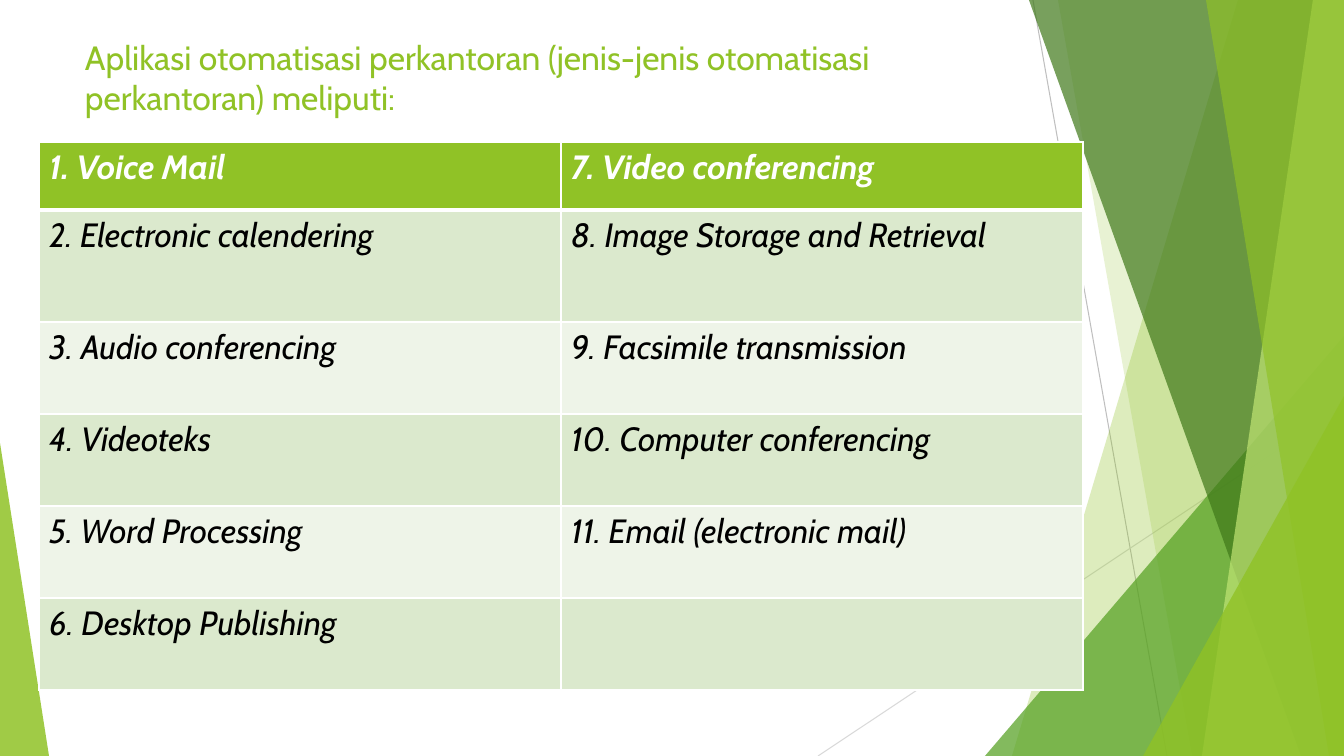
from dataclasses import dataclass

from lxml import etree
from pptx import Presentation
from pptx import util as u
from pptx.dml.color import RGBColor
from pptx.enum import shapes, text
from pptx.oxml.ns import qn

WIDTH, HEIGHT = 1344, 756
EMU_PER_PX = 914400 / 100.8


@dataclass(frozen=True)
class Theme:
    font: str = "Cabin"
    size: int = 24
    hairline: float = 0.75
    border: int = 1
    header_border: int = 3
    white: str = "FFFFFF"
    black: str = "000000"
    lime: str = "90C226"
    pale_lime: str = "C0E474"
    leaf: str = "54A021"
    forest: str = "3F7819"
    bands: tuple = ("DBE9CD", "EEF4E8")
    gray: str = "BFBFBF"
    light_gray: str = "D9D9D9"


def px(length):
    return u.Emu(round(length * EMU_PER_PX))


def rgb(color):
    return RGBColor.from_string(color)


class SlideBuilder:
    def __init__(self, slide, theme):
        self.slide = slide
        self.theme = theme

    def line(self, start, end, color):
        connector = self.slide.shapes.add_connector(
            shapes.MSO_CONNECTOR.STRAIGHT, *map(px, start + end))
        connector.line.color.rgb = rgb(color)
        connector.line.width = u.Pt(self.theme.hairline)
        etree.SubElement(connector._element.spPr, qn("a:effectLst"))

    def paint(self, shape, color, opacity):
        """Fill a shape with a colour at an opacity in percent, without outline."""
        shape.shadow.inherit = False
        shape.line.fill.background()
        shape.fill.solid()
        shape.fill.fore_color.rgb = rgb(color)
        color_node = shape._element.spPr.find(qn("a:solidFill"))[0]
        etree.SubElement(color_node, qn("a:alpha"), val=str(opacity * 1000))

    def ribbon(self, top, bottom, color, opacity):
        """Fill from a slanted left edge to the right side of the slide."""
        builder = self.slide.shapes.build_freeform(top, 0, scale=EMU_PER_PX)
        builder.add_line_segments([(WIDTH, 0), (WIDTH, HEIGHT), (bottom, HEIGHT)])
        self.paint(builder.convert_to_shape(), color, opacity)

    def corner(self, left, width, height, apex, color, opacity):
        """Add a triangle on the bottom edge; apex 0 is left, 1 is right."""
        shape = self.slide.shapes.add_shape(
            shapes.MSO_SHAPE.ISOSCELES_TRIANGLE,
            px(left), px(HEIGHT - height), px(width), px(height))
        shape.adjustments[0] = apex
        self.paint(shape, color, opacity)

    def style(self, paragraph, color, bold=False, italic=False):
        font = paragraph.font
        font.name, font.size = self.theme.font, u.Pt(self.theme.size)
        font.bold, font.italic = bold, italic
        font.color.rgb = rgb(color)

    def title(self, left, top, width, height, wording):
        frame = self.slide.shapes.add_textbox(*map(px, (left, top, width, height))).text_frame
        frame.word_wrap = True
        frame.vertical_anchor = text.MSO_ANCHOR.TOP
        frame.text = wording
        self.style(frame.paragraphs[0], self.theme.lime)

    def number(self, paragraph):
        """Turn on automatic numbering for a paragraph."""
        bullet = etree.Element(qn("a:buAutoNum"), type="arabicPeriod")
        paragraph._p.get_or_add_pPr().insert(0, bullet)

    def borders(self, cell, bottom_width):
        properties = cell._tc.get_or_add_tcPr()
        for index, side in enumerate(("lnL", "lnR", "lnT", "lnB")):
            width = bottom_width if side == "lnB" else self.theme.border
            line = etree.Element(qn(f"a:{side}"), w=str(u.Pt(width)))
            fill = etree.SubElement(line, qn("a:solidFill"))
            etree.SubElement(fill, qn("a:srgbClr"), val=self.theme.white)
            properties.insert(index, line)

    def table(self, left, top, column_width, row_heights, rows):
        theme = self.theme
        columns = len(rows[0])
        table = self.slide.shapes.add_table(
            len(rows), columns, px(left), px(top),
            px(column_width * columns), px(sum(row_heights))).table
        for column in table.columns:
            column.width = px(column_width)
        for index, (row, height, wordings) in enumerate(zip(table.rows, row_heights, rows)):
            row.height = px(height)
            header = index == 0
            for cell, wording in zip(row.cells, wordings):
                cell.text = wording
                cell.fill.solid()
                cell.fill.fore_color.rgb = rgb(
                    theme.lime if header else theme.bands[(index - 1) % 2])
                self.borders(cell, theme.header_border if header else theme.border)
                self.style(cell.text_frame.paragraphs[0],
                           theme.white if header else theme.black, header, True)
        return table


def main():
    presentation = Presentation()
    presentation.slide_width, presentation.slide_height = px(WIDTH), px(HEIGHT)
    theme = Theme()
    slide = presentation.slides.add_slide(presentation.slide_layouts[6])
    builder = SlideBuilder(slide, theme)

    builder.line((1033, 0), (1167, HEIGHT), theme.gray)
    builder.line((WIDTH, 406), (818, HEIGHT), theme.light_gray)
    builder.ribbon(1238, 1012, theme.lime, 30)
    builder.ribbon(1058, 1192, theme.lime, 20)
    builder.corner(985, 359, 420, 1, theme.leaf, 72)
    builder.ribbon(1029, 1301, theme.forest, 70)
    builder.ribbon(1313, 1202, theme.pale_lime, 70)
    builder.ribbon(1206, 1329, theme.lime, 65)
    builder.corner(1143, 201, 360, 1, theme.lime, 80)
    builder.corner(0, 49, 313, 0, theme.lime, 85)

    builder.title(75, 32, 947, 97, "Aplikasi otomatisasi perkantoran "
                  "(jenis-jenis otomatisasi perkantoran) meliputi:")
    applications = builder.table(39, 142, 522, [68, 112] + [92] * 4, [
        (" Voice Mail", "7. Video conferencing"),
        ("2. Electronic calendering", "8. Image Storage and Retrieval"),
        ("3. Audio conferencing", "9. Facsimile transmission"),
        ("4. Videoteks", "10. Computer conferencing"),
        ("5. Word Processing", "11. Email (electronic mail)"),
        ("6. Desktop Publishing", ""),
    ])
    builder.number(applications.cell(0, 0).text_frame.paragraphs[0])
    presentation.save("out.pptx")


if __name__ == "__main__":
    main()
